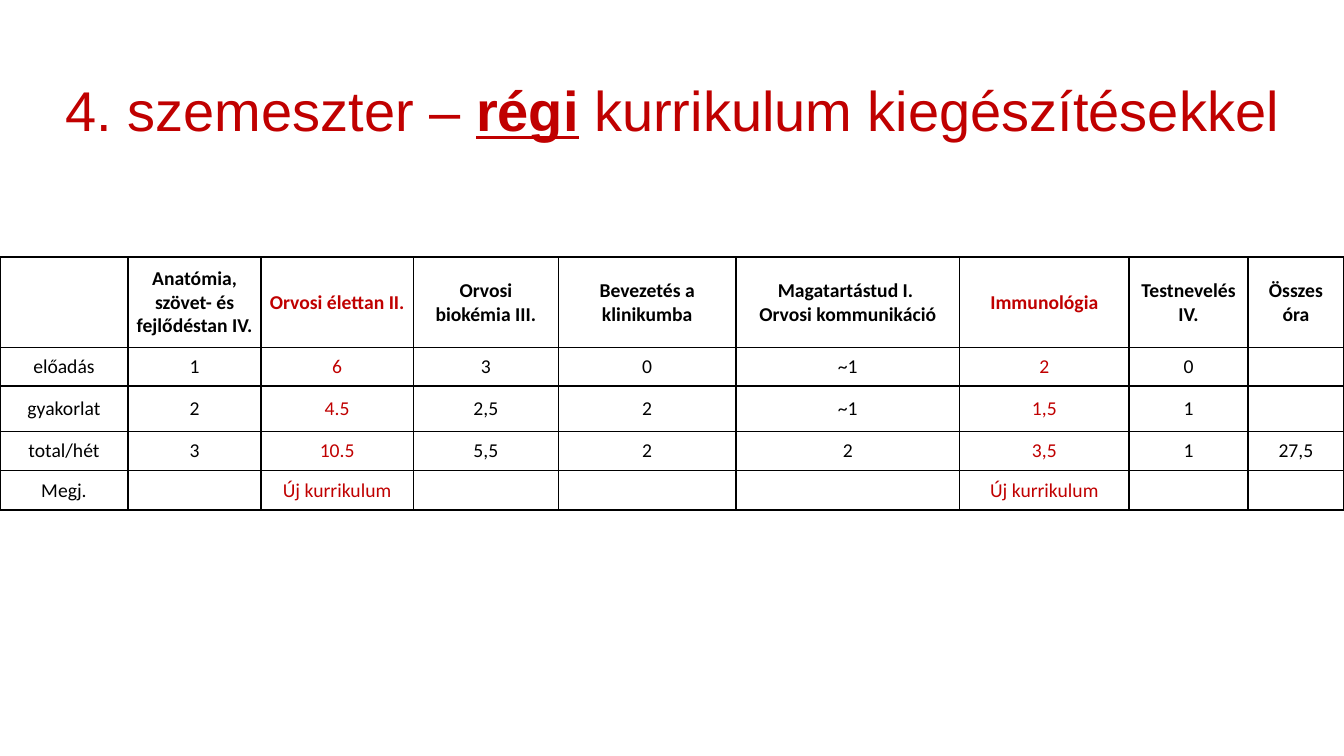
import pptx
import pptx.util
import pptx.dml.color
import pptx.enum.text
import pptx.oxml.ns
from lxml import etree

Inches, Pt = pptx.util.Inches, pptx.util.Pt
RGBColor = pptx.dml.color.RGBColor
MIDDLE = pptx.enum.text.MSO_ANCHOR.MIDDLE
CENTER = pptx.enum.text.PP_ALIGN.CENTER
qn = pptx.oxml.ns.qn

RED = RGBColor(0xC0, 0x00, 0x00)
BLACK = RGBColor(0x00, 0x00, 0x00)
TITLE = [("4. szemeszter – ", False), ("régi", True), (" kurrikulum kiegészítésekkel", False)]
HEAD = ["", "Anatómia, szövet- és fejlődéstan IV.", "Orvosi élettan II.",
        "Orvosi biokémia III.", "Bevezetés a klinikumba",
        "Magatartástud I. \nOrvosi kommunikáció", "Immunológia",
        "Testnevelés IV.", "Összes óra"]
ROWS = [
    HEAD,
    ["előadás", "1", "6", "3", "0", "~1", "2", "0", ""],
    ["gyakorlat", "2", "4.5", "2,5", "2", "~1", "1,5", "1", ""],
    ["total/hét", "3", "10.5", "5,5", "2", "2", "3,5", "1", "27,5"],
    ["Megj.", "", "Új kurrikulum", "", "", "", "Új kurrikulum", "", ""],
]
WIDTHS = [1.27, 1.32, 1.51, 1.44, 1.76, 2.22, 1.68, 1.18, 0.95]
HEIGHTS = [0.9, 0.38, 0.45, 0.39, 0.39]
NEW = {HEAD.index("Orvosi élettan II."), HEAD.index("Immunológia")}


def style(run, face, size, color, bold):
    font = run.font
    font.name, font.size, font.bold = face, Pt(size), bold
    font.color.rgb = color


def border(cell):
    props = cell._tc.get_or_add_tcPr()
    for side in ("a:lnL", "a:lnR", "a:lnT", "a:lnB"):
        line = etree.SubElement(props, qn(side), w=str(Pt(1)))
        fill = etree.SubElement(line, qn("a:solidFill"))
        etree.SubElement(fill, qn("a:srgbClr"), val=str(BLACK))


def add_title(slide):
    title = slide.shapes.title
    title.left, title.top = Inches(0), Inches(0.4)
    title.width, title.height = Inches(13.33), Inches(1.45)
    frame = title.text_frame
    frame.word_wrap = True
    frame.auto_size = pptx.enum.text.MSO_AUTO_SIZE.NONE
    frame.vertical_anchor = MIDDLE
    para = frame.paragraphs[0]
    para.alignment, para.line_spacing = CENTER, 0.9
    for text, strong in TITLE:
        run = para.add_run()
        run.text = text
        style(run, "Arial", 40, RED, strong)
        run.font.underline = strong


def add_hours(slide):
    table = slide.shapes.add_table(
        len(ROWS), len(WIDTHS), Inches(0), Inches(2.55),
        Inches(sum(WIDTHS)), Inches(sum(HEIGHTS))).table
    table.first_row = table.horz_banding = False
    for col, width in zip(table.columns, WIDTHS):
        col.width = Inches(width)
    for r, (row, height) in enumerate(zip(ROWS, HEIGHTS)):
        table.rows[r].height = Inches(height)
        for c, text in enumerate(row):
            cell = table.cell(r, c)
            border(cell)
            cell.fill.background()
            cell.vertical_anchor = MIDDLE
            cell.margin_left = cell.margin_right = Inches(0.07)
            cell.margin_top = cell.margin_bottom = 0
            cell.text_frame.text = text
            for para in cell.text_frame.paragraphs:
                para.alignment = CENTER
                for run in para.runs:
                    style(run, "Calibri", 14, RED if c in NEW else BLACK, r == 0)


def main():
    deck = pptx.Presentation()
    deck.slide_width, deck.slide_height = Inches(13.33), Inches(7.5)
    slide = deck.slides.add_slide(deck.slide_layouts[5])
    add_title(slide)
    add_hours(slide)
    deck.save("out.pptx")


if __name__ == "__main__":
    main()
